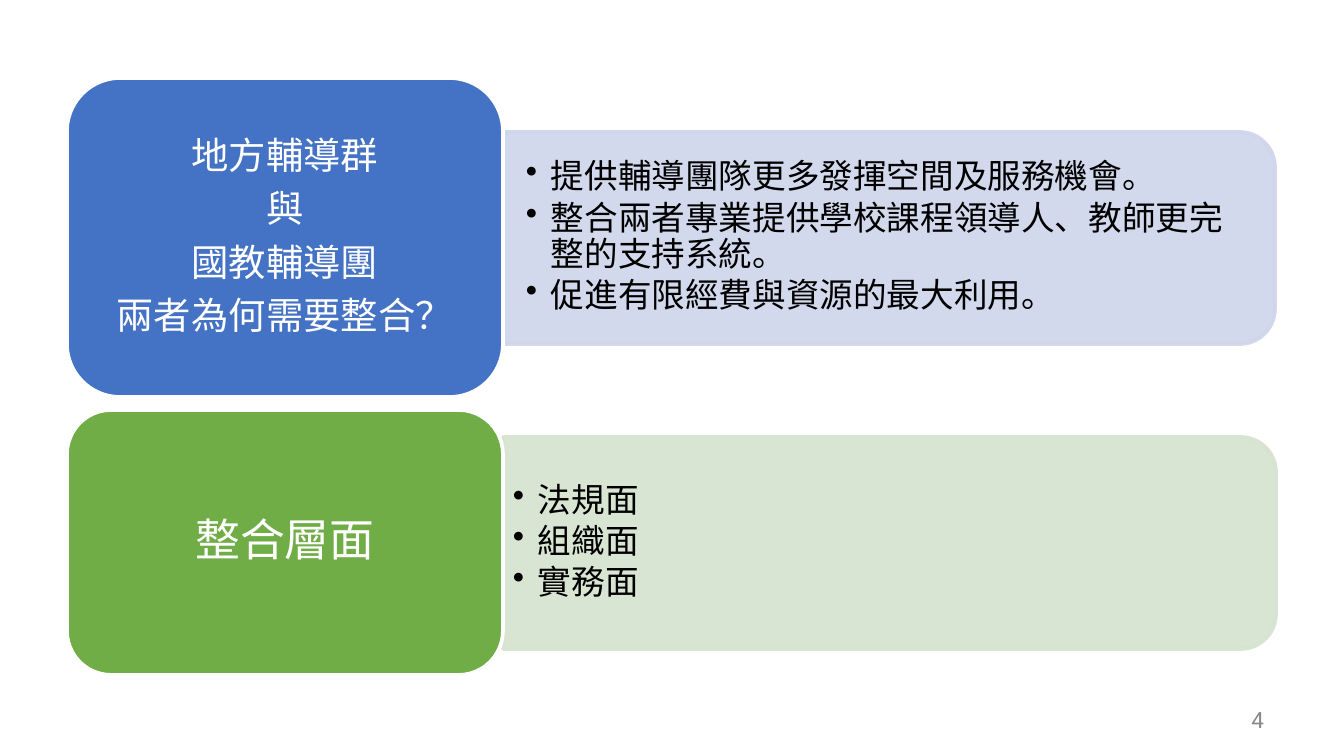
from lxml import etree
from pptx import Presentation
from pptx.dml.color import RGBColor
from pptx.enum.shapes import MSO_SHAPE as Shape
from pptx.enum.text import MSO_ANCHOR as Anchor, PP_ALIGN as Align
from pptx.oxml.ns import qn
from pptx.util import Emu, Pt

EMU_PER_PX = 914400 * 10 / 1344
CJK_FONT = "Noto Sans CJK SC"
CARD_LEFT, CARD_WIDTH = 67, 436
PANEL_WIDTH, PANEL_HEIGHT = 773, 212
BULLET_INDENT = 25


def px(length):
    return Emu(round(length * EMU_PER_PX))


def color(hex_string):
    return RGBColor.from_string(hex_string)


def add_block(slide, kind, box, fill, line):
    shape = slide.shapes.add_shape(kind, *map(px, box))
    shape.shadow.inherit = False
    shape.fill.solid()
    shape.fill.fore_color.rgb = color(fill)
    shape.line.color.rgb = color(line)
    shape.line.width = Pt(2)
    return shape


def set_margins(frame, horizontal, vertical):
    frame.margin_left = frame.margin_right = px(horizontal)
    frame.margin_top = frame.margin_bottom = px(vertical)


def add_bullet(paragraph):
    properties = paragraph._p.get_or_add_pPr()
    properties.set("marL", str(px(BULLET_INDENT)))
    properties.set("indent", str(-px(BULLET_INDENT)))
    etree.SubElement(properties, qn("a:buChar")).set("char", "•")


def write_lines(frame, lines, size, font_color, align, gap=0.0, font=CJK_FONT,
                spacing=0.9, bullets=False):
    frame.word_wrap = True
    frame.vertical_anchor = Anchor.MIDDLE
    frame.text = "\n".join(lines)
    for paragraph in frame.paragraphs:
        if bullets:
            add_bullet(paragraph)
        paragraph.alignment = align
        paragraph.line_spacing = spacing
        paragraph.space_after = Pt(size * gap)
        paragraph.font.size = Pt(size)
        paragraph.font.name = font
        paragraph.font.color.rgb = color(font_color)


def add_panel(slide, left, top, fill, lines, margins):
    # The block is upright and turned a quarter, so its round end faces right
    offset = (PANEL_WIDTH - PANEL_HEIGHT) / 2
    box = (left + offset, top - offset, PANEL_HEIGHT, PANEL_WIDTH)
    panel = add_block(slide, Shape.ROUND_2_SAME_RECTANGLE, box, fill, fill)
    panel.rotation = 90
    for solid in panel._element.spPr.iter(qn("a:srgbClr")):
        etree.SubElement(solid, qn("a:alpha")).set("val", "90000")

    text_box = slide.shapes.add_textbox(*map(px, (503, top + 10, 763, 191)))
    set_margins(text_box.text_frame, *margins)
    write_lines(text_box.text_frame, lines, 18, "000000", Align.LEFT,
                gap=0.15, bullets=True)


def add_card(slide, top, height, fill, lines, size):
    box = (CARD_LEFT, top, CARD_WIDTH, height)
    card = add_block(slide, Shape.ROUNDED_RECTANGLE, box, fill, "FFFFFF")
    set_margins(card.text_frame, 10, 5)
    write_lines(card.text_frame, lines, size, "FFFFFF", Align.CENTER, gap=0.35)


def add_page_number(slide, number):
    text_box = slide.shapes.add_textbox(*map(px, (964, 700, 313, 40)))
    set_margins(text_box.text_frame, 13, 7)
    write_lines(text_box.text_frame, [number], 12, "888888", Align.RIGHT,
                font="Roboto", spacing=1.0)


def main():
    presentation = Presentation()
    presentation.slide_width, presentation.slide_height = px(1344), px(756)
    slide = presentation.slides.add_slide(presentation.slide_layouts[6])

    # Why integrate
    add_panel(slide, 502, 132, "CFD5EA", [
        "提供輔導團隊更多發揮空間及服務機會。",
        "整合兩者專業提供學校課程領導人、教師更完整的支持系統。",
        "促進有限經費與資源的最大利用。",
    ], margins=(23, 12))
    add_card(slide, 78, 319, "4472C4",
             ["地方輔導群", "與", "國教輔導團", "兩者為何需要整合？"], 20)

    # Levels of integration
    add_panel(slide, 503, 437, "D5E3CF", ["法規面", "組織面", "實務面"],
              margins=(10, 5))
    add_card(slide, 410, 265, "70AD47", ["整合層面"], 24)

    add_page_number(slide, "4")
    presentation.save("out.pptx")


if __name__ == "__main__":
    main()
